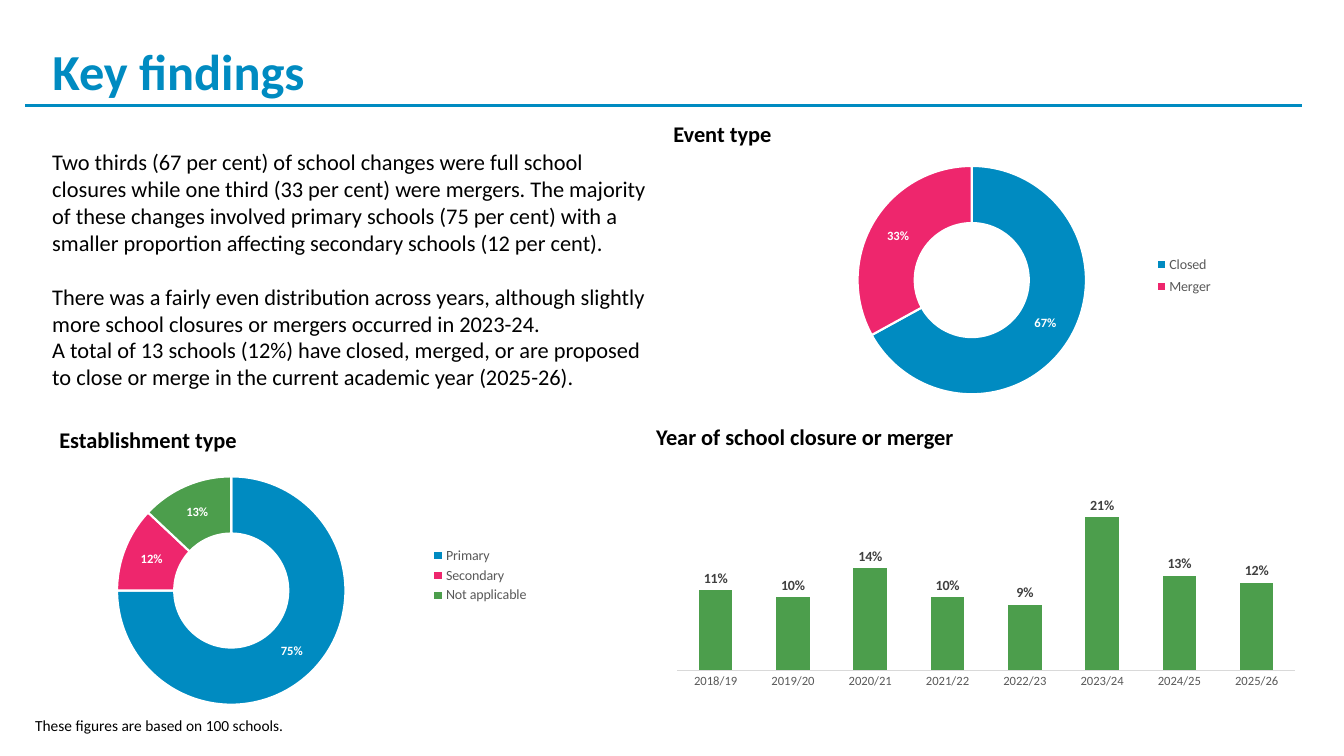
"""Build the key findings slide on school closures and mergers."""
from lxml import etree
from pptx import Presentation
from pptx import util as u
from pptx.chart.data import CategoryChartData
from pptx.dml.color import RGBColor
from pptx.enum import chart as kinds, shapes, text
from pptx.oxml import ns

BLUE, PINK, GREEN = "008BC1", "EE266D", "4C9E4C"
BLACK, WHITE, GREY = "000000", "FFFFFF", "595959"


def colour(value):
    return RGBColor.from_string(value)


class FindingsSlide:
    font_name = "Calibri"

    def __init__(self, deck):
        self.page = deck.slides.add_slide(deck.slide_layouts[5])

    def style(self, font, size, shade=BLACK, bold=False):
        font.name, font.size, font.bold = self.font_name, u.Pt(size), bold
        font.color.rgb = colour(shade)

    def title(self, wording, area):
        box = self.page.shapes.title
        box.left, box.top, box.width, box.height = map(u.Inches, area)
        box.text_frame.vertical_anchor = text.MSO_ANCHOR.MIDDLE
        para = box.text_frame.paragraphs[0]
        para.alignment = text.PP_ALIGN.LEFT
        para.line_spacing = 0.9
        span = para.add_run()
        span.text = wording
        self.style(span.font, 36, BLUE, True)

    def rule(self, left, right, top):
        line = self.page.shapes.add_connector(
            shapes.MSO_CONNECTOR.STRAIGHT,
            u.Inches(left), u.Inches(top), u.Inches(right), u.Inches(top))
        line.line.color.rgb = colour(BLUE)
        line.line.width = u.Pt(2.25)
        etree.SubElement(line._element.spPr, ns.qn("a:effectLst"))

    def text(self, area, paragraphs, size=16, bold=False):
        frame = self.page.shapes.add_textbox(*map(u.Inches, area)).text_frame
        frame.word_wrap = True
        frame.auto_size = text.MSO_AUTO_SIZE.SHAPE_TO_FIT_TEXT
        for index, (wording, gap) in enumerate(paragraphs):
            para = frame.add_paragraph() if index else frame.paragraphs[0]
            para.space_before = u.Pt(gap)
            span = para.add_run()
            span.text = wording
            self.style(span.font, size, bold=bold)

    def heading(self, area, wording):
        self.text(area, [(wording, 0)], bold=True)

    def place(self, parent, index, area):
        for old in parent.findall(ns.qn("c:layout")):
            parent.remove(old)
        layout = etree.Element(ns.qn("c:layout"))
        manual = etree.SubElement(layout, ns.qn("c:manualLayout"))
        settings = [("xMode", "edge"), ("yMode", "edge"), *zip("xywh", area)]
        if parent.tag == ns.qn("c:plotArea"):
            settings.insert(0, ("layoutTarget", "inner"))
        for tag, value in settings:
            etree.SubElement(manual, ns.qn(f"c:{tag}")).set("val", str(value))
        parent.insert(index, layout)

    def chart(self, kind, area, values, plot_area, label_size, label_shade):
        data = CategoryChartData(number_format="0%")
        data.categories = list(values)
        data.add_series("Series 1", list(values.values()))
        chart = self.page.shapes.add_chart(
            kind, *map(u.Inches, area), data).chart
        chart.has_title = False
        chart.has_legend = False
        self.style(chart.font, 10)
        self.place(chart._chartSpace.chart.plotArea, 0, plot_area)
        plot = chart.plots[0]
        plot.has_data_labels = True
        labels = plot.data_labels
        labels.show_value = True
        labels.show_percentage = False
        labels.number_format = "0%"
        labels.number_format_is_linked = False
        self.style(labels.font, label_size, label_shade, True)
        return chart

    def doughnut(self, area, values, plot_area, legend_area=None):
        chart = self.chart(kinds.XL_CHART_TYPE.DOUGHNUT, area, values,
                           plot_area, 9, WHITE)
        chart.plots[0].vary_by_categories = True
        series = chart.plots[0].series[0]
        for index, shade in zip(range(len(values)), (BLUE, PINK, GREEN)):
            form = series.points[index].format
            form.fill.solid()
            form.fill.fore_color.rgb = colour(shade)
            form.line.color.rgb = colour(WHITE)
            form.line.width = u.Pt(1.5)
        chart.has_legend = True
        legend = chart.legend
        legend.position = kinds.XL_LEGEND_POSITION.RIGHT
        legend.include_in_layout = False
        self.style(legend.font, 10, GREY)
        if legend_area:
            self.place(legend._element, 1, legend_area)

    def columns(self, area, values, plot_area):
        chart = self.chart(kinds.XL_CHART_TYPE.COLUMN_CLUSTERED, area, values,
                           plot_area, 10, "404040")
        plot = chart.plots[0]
        plot.vary_by_categories = False
        plot.gap_width, plot.overlap = 130, -27
        plot.data_labels.position = kinds.XL_LABEL_POSITION.OUTSIDE_END
        fill = plot.series[0].format.fill
        fill.solid()
        fill.fore_color.rgb = colour(GREEN)
        years, shares = chart.category_axis, chart.value_axis
        years.major_tick_mark = kinds.XL_TICK_MARK.NONE
        years.format.line.color.rgb = colour("D9D9D9")
        years.format.line.width = u.Pt(0.75)
        self.style(years.tick_labels.font, 9, GREY)
        shares.minimum_scale, shares.maximum_scale = 0, 0.3
        shares.has_major_gridlines = False
        shares.visible = False


def main():
    deck = Presentation()
    deck.slide_width, deck.slide_height = u.Inches(13.33), u.Inches(7.5)
    slide = FindingsSlide(deck)
    slide.title("Key findings", (0.42, 0.3, 11.5, 0.87))
    slide.rule(0.25, 12.91, 1.05)
    slide.text((0.42, 1.42, 6.24, 2.52), [
        ("Two thirds (67 per cent) of school changes were full school closures "
         "while one third (33 per cent) were mergers. The majority of these "
         "changes involved primary schools (75 per cent) with a smaller "
         "proportion affecting secondary schools (12 per cent).", 0),
        ("There was a fairly even distribution across years, although slightly "
         "more school closures or mergers occurred in 2023-24.", 19.5),
        ("A total of 13 schools (12%) have closed, merged, or are proposed to "
         "close or merge in the current academic year (2025-26).", 0)])
    slide.text((0.25, 7.06, 10.51, 0.29),
               [("These figures are based on 100 schools.", 0)], size=11)
    slide.doughnut((0.34, 4.22, 5.01, 2.98),
                   {"Primary": 0.75, "Secondary": 0.12, "Not applicable": 0.13},
                   (0.16, 0.17, 0.46, 0.76))
    slide.heading((0.49, 4.18, 3.11, 0.37), "Establishment type")
    slide.heading((6.41, 4.15, 4.08, 0.37), "Year of school closure or merger")
    slide.doughnut((7.66, 1.2, 5.01, 2.98), {"Closed": 0.67, "Merger": 0.33},
                   (0.165, 0.15, 0.46, 0.76), (0.75, 0.43, 0.13, 0.17))
    slide.heading((6.58, 1.14, 3.11, 0.37), "Event type")
    slide.columns((6.45, 4.28, 6.63, 2.91),
                  {"2018/19": 0.11, "2019/20": 0.1, "2020/21": 0.14,
                   "2021/22": 0.1, "2022/23": 0.09, "2023/24": 0.21,
                   "2024/25": 0.13, "2025/26": 0.12},
                  (0.04, 0.07, 0.925, 0.745))
    deck.save("out.pptx")


if __name__ == "__main__":
    main()
